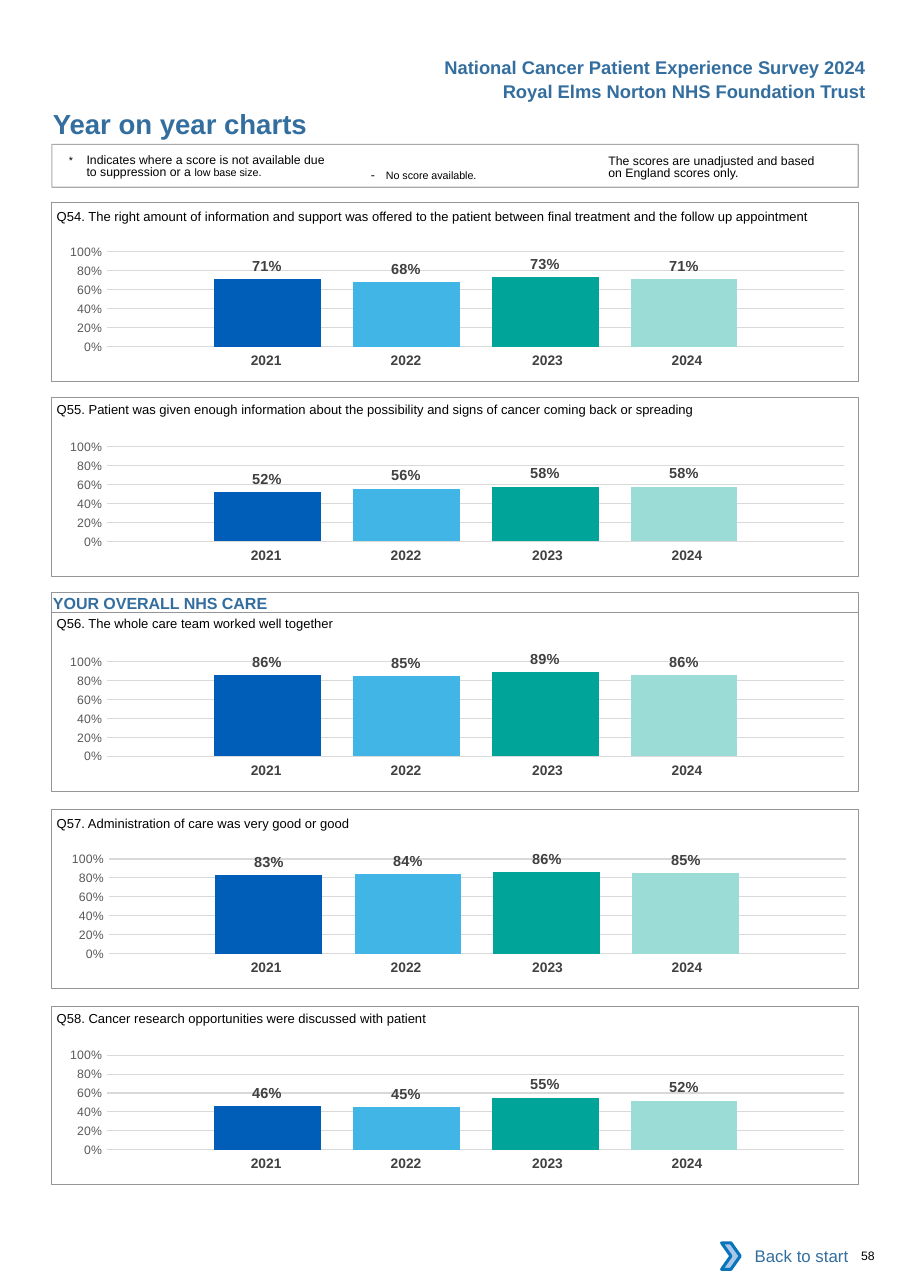
from dataclasses import dataclass

from lxml.etree import SubElement
from pptx import Presentation
from pptx.chart.data import CategoryChartData
from pptx.dml.color import RGBColor
from pptx.enum.chart import XL_CHART_TYPE, XL_LABEL_POSITION, XL_TICK_MARK
from pptx.enum.shapes import MSO_SHAPE
from pptx.enum.text import MSO_ANCHOR, PP_ALIGN
from pptx.oxml.ns import qn
from pptx.oxml.xmlchemy import BaseOxmlElement
from pptx.shapes.autoshape import Shape
from pptx.slide import Slide
from pptx.text.text import Font, TextFrame
from pptx.util import Pt

COLOURS = {
    "heading": "336E9F", "text": "000000", "frame": "939598", "year": "414042",
    "axis": "595959", "grid": "D9D9D9", "label": "404040", "white": "FFFFFF",
    "arrow": "A8C7E9", "arrow line": "0A74BB",
    "2021": "005EB8", "2022": "41B6E6", "2023": "00A499", "2024": "9CDCD7",
}
YEARS = ("2021", "2022", "2023", "2024")
YEAR_COLUMNS = ((91.44, 0), (91.44, 0), (96.48, 2.9), (91.44, 8.6))  # width, right margin
NO_TABLE_STYLE = "{2D5ABB26-0587-4C30-8999-92F81FD0307C}"
PANEL_LEFT, PANEL_WIDTH, PANEL_HEIGHT = 33.9, 527, 116.6
CHART_LAYOUT = {"x": 0.079, "y": 0.145, "w": 0.915, "h": 0.666}


@dataclass
class Panel:
    top: float
    question: str
    question_drop: float
    scores: tuple[float, ...]
    chart_left: float = 28.1


@dataclass
class Span:
    text: str
    size: float
    bold: bool = False
    colour: str = "text"


@dataclass
class Label:
    left: float
    top: float
    width: float
    height: float
    spans: list[Span]
    align: PP_ALIGN = PP_ALIGN.LEFT
    line_spacing: float | None = None
    hanging: float = 0


PANELS = [
    Panel(132.5, "Q54. The right amount of information and support was offered to the patient "
          "between final treatment and the follow up appointment", 3.6, (0.71, 0.68, 0.73, 0.71)),
    Panel(259.9, "Q55. Patient was given enough information about the possibility and signs of "
          "cancer coming back or spreading", 2.4, (0.52, 0.56, 0.58, 0.58)),
    Panel(400.3, "Q56. The whole care team worked well together", 1.7, (0.86, 0.85, 0.89, 0.86)),
    Panel(529.2, "Q57. Administration of care was very good or good", 3.8,
          (0.83, 0.84, 0.86, 0.85), 29.3),
    Panel(657.4, "Q58. Cancer research opportunities were discussed with patient", 2.9,
          (0.46, 0.45, 0.55, 0.52)),
]

LABELS = [
    Label(265.9, 36.7, 300, 15, [Span("National Cancer Patient Experience Survey 2024", 12, True,
                                      "heading")], PP_ALIGN.RIGHT),
    Label(265.9, 52.7, 300, 15, [Span("Royal Elms Norton NHS Foundation Trust", 12, True,
                                      "heading")], PP_ALIGN.RIGHT),
    Label(45.1, 100.7, 172, 18, [
        Span("*\t", 7), Span("Indicates where a score is not available due to suppression or a ", 8),
        Span("low base size.", 7)], line_spacing=8.1, hanging=11.5),
    Label(242.4, 109.5, 120, 10, [Span("-\t", 8), Span("No score available.", 7)], hanging=9.8),
    Label(397.6, 101.6, 142, 18, [Span("The scores are unadjusted and based on England scores only.",
                                       8)], line_spacing=8.1),
    Label(562.8, 815.8, 25, 10, [Span("58", 8)]),
]


def rgb(name: str) -> RGBColor:
    return RGBColor.from_string(COLOURS[name])


def format_font(font: Font, size: float, colour: str, bold: bool = False) -> None:
    for name, value in {"name": "Arial", "size": Pt(size), "bold": bold}.items():
        setattr(font, name, value)
    font.color.rgb = rgb(colour)


def format_frame(frame: TextFrame, anchor: MSO_ANCHOR = MSO_ANCHOR.TOP, left: float = 0,
                 right: float = 0) -> None:
    values = {"margin_left": Pt(left), "margin_right": Pt(right), "margin_top": 0,
              "margin_bottom": 0, "word_wrap": True, "vertical_anchor": anchor}
    for name, value in values.items():
        setattr(frame, name, value)


def write(frame: TextFrame, spans: list[Span], align: PP_ALIGN = PP_ALIGN.LEFT) -> None:
    para = frame.paragraphs[0]
    para.alignment = align
    for span in spans:
        run = para.add_run()
        run.text = span.text
        format_font(run.font, span.size, span.colour, span.bold)


def add_label(page: Slide, label: Label) -> None:
    box = page.shapes.add_textbox(Pt(label.left), Pt(label.top), Pt(label.width), Pt(label.height))
    format_frame(box.text_frame)
    write(box.text_frame, label.spans, label.align)
    para = box.text_frame.paragraphs[0]
    if label.line_spacing:
        para.line_spacing = Pt(label.line_spacing)
    if label.hanging:
        properties = para._p.get_or_add_pPr()
        properties.set("marL", str(Pt(label.hanging)))
        properties.set("indent", str(-Pt(label.hanging)))


def add_box(page: Slide, left: float, top: float, width: float, height: float,
            line: str | None = "frame", weight: float = 0.5, fill: str | None = None,
            kind: MSO_SHAPE = MSO_SHAPE.RECTANGLE) -> Shape:
    box = page.shapes.add_shape(kind, Pt(left), Pt(top), Pt(width), Pt(height))
    box.shadow.inherit = False
    for part, colour in ((box.fill, fill), (box.line.fill, line)):
        if colour:
            part.solid()
            part.fore_color.rgb = rgb(colour)
        else:
            part.background()
    if line:
        box.line.width = Pt(weight)
    return box


def add_years(page: Slide, top: float) -> None:
    width = sum(column[0] for column in YEAR_COLUMNS)
    table = page.shapes.add_table(1, len(YEARS), Pt(124.6), Pt(top), Pt(width), Pt(19.4)).table
    table.first_row = table.horz_banding = False
    table._tbl.tblPr.find(qn("a:tableStyleId")).text = NO_TABLE_STYLE
    for index, (year, (column_width, right)) in enumerate(zip(YEARS, YEAR_COLUMNS)):
        table.columns[index].width = Pt(column_width)
        cell = table.cell(0, index)
        cell.fill.background()
        cell.margin_left, cell.margin_right = Pt(7.2), Pt(right)
        write(cell.text_frame, [Span(year, 9, True, "year")], PP_ALIGN.CENTER)


def place_plot(plot_area: BaseOxmlElement) -> None:
    layout = plot_area.find(qn("c:layout"))
    if layout is None:
        layout = plot_area.makeelement(qn("c:layout"))
        plot_area.insert(0, layout)
    manual = SubElement(layout, qn("c:manualLayout"))
    values = {"layoutTarget": "inner", "xMode": "edge", "yMode": "edge", **CHART_LAYOUT}
    for name, value in values.items():
        SubElement(manual, qn(f"c:{name}")).set("val", str(value))


def add_score_chart(page: Slide, panel: Panel) -> None:
    data = CategoryChartData(number_format="0%")
    data.categories = ["1"]
    for year, score in zip(YEARS, panel.scores):
        data.add_series(year, [score])
    chart = page.shapes.add_chart(XL_CHART_TYPE.COLUMN_CLUSTERED, Pt(panel.chart_left),
                                  Pt(panel.top + 18.7), Pt(PANEL_WIDTH), Pt(92.9), data).chart
    chart.has_legend = chart.has_title = False
    chart.font.name, chart.font.size = "Calibri", Pt(10)
    chart.category_axis.visible = False
    place_plot(chart._chartSpace.chart.plotArea)

    # Percentage axis
    axis = chart.value_axis
    for name, value in {"minimum_scale": 0, "maximum_scale": 1, "major_unit": 0.2,
                        "major_tick_mark": XL_TICK_MARK.NONE}.items():
        setattr(axis, name, value)
    axis.format.line.fill.background()
    axis.major_gridlines.format.line.color.rgb = rgb("grid")
    axis.major_gridlines.format.line.width = Pt(0.75)
    axis.tick_labels.number_format, axis.tick_labels.number_format_is_linked = "0%", False
    format_font(axis.tick_labels.font, 8, "axis")

    # One column per year
    plot = chart.plots[0]
    plot.gap_width, plot.overlap, plot.vary_by_categories = 200, -30, False
    for year, series in zip(YEARS, plot.series):
        series.format.fill.solid()
        series.format.fill.fore_color.rgb = rgb(year)
        labels = series.data_labels
        for name, value in {"show_value": True, "position": XL_LABEL_POSITION.OUTSIDE_END,
                            "number_format": "0%", "number_format_is_linked": False}.items():
            setattr(labels, name, value)
        format_font(labels.font, 9.5, "label", True)


def main() -> None:
    deck = Presentation()
    deck.slide_width, deck.slide_height = Pt(594.72), Pt(841.68)
    page = deck.slides.add_slide(deck.slide_layouts[5])

    # Title
    title = page.shapes.title
    for name, value in {"left": 34.5, "top": 70, "width": 324, "height": 21.6}.items():
        setattr(title, name, Pt(value))
    format_frame(title.text_frame)
    write(title.text_frame, [Span("Year on year charts", 18, True, "heading")])

    # Notes frame, headings and page number
    notes_frame = add_box(page, PANEL_LEFT, 94.3, PANEL_WIDTH, 28.1, weight=0.75)
    line_colour = notes_frame._element.spPr.find(f".//{qn('a:srgbClr')}")
    SubElement(line_colour, qn("a:alpha")).set("val", "80000")
    for label in LABELS:
        add_label(page, label)

    # Question panels
    for panel in PANELS:
        add_box(page, PANEL_LEFT, panel.top, PANEL_WIDTH, PANEL_HEIGHT)
        add_label(page, Label(37.1, panel.top + panel.question_drop, 518, 10,
                              [Span(panel.question, 8.5)]))
        add_years(page, panel.top + 94.4)
        add_score_chart(page, panel)

    # Section heading
    section = add_box(page, PANEL_LEFT, 387.4, PANEL_WIDTH, 12.9)
    format_frame(section.text_frame, MSO_ANCHOR.MIDDLE, left=0.7)
    write(section.text_frame, [Span("YOUR OVERALL NHS CARE", 10.5, True, "heading")])

    # Back to start button
    button = add_box(page, 476.6, 805.7, 85, 30.2, line=None, fill="white")
    format_frame(button.text_frame, MSO_ANCHOR.MIDDLE, right=7.2)
    write(button.text_frame, [Span("Back to start", 11, colour="heading")], PP_ALIGN.RIGHT)
    add_box(page, 471.6, 812.2, 12.2, 17.3, "arrow line", 2, "arrow", MSO_SHAPE.CHEVRON)

    deck.save("out.pptx")


if __name__ == "__main__":
    main()
